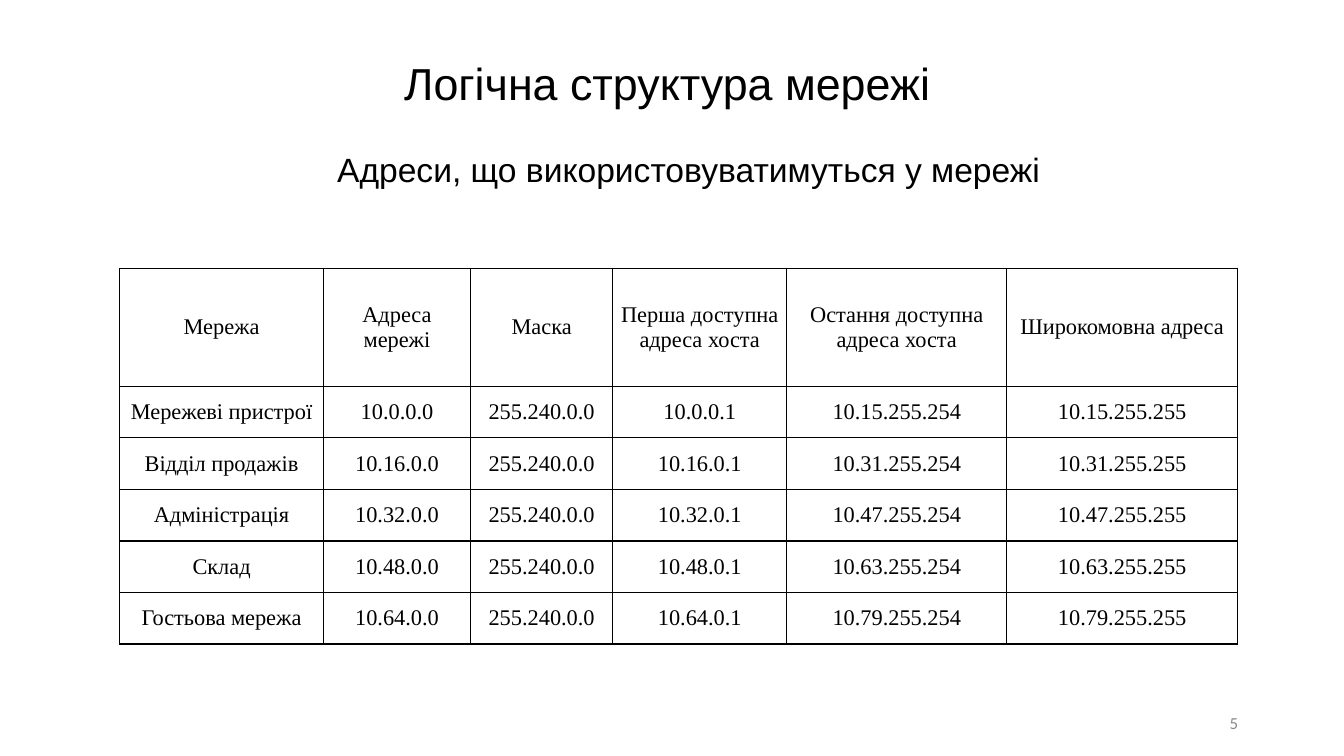
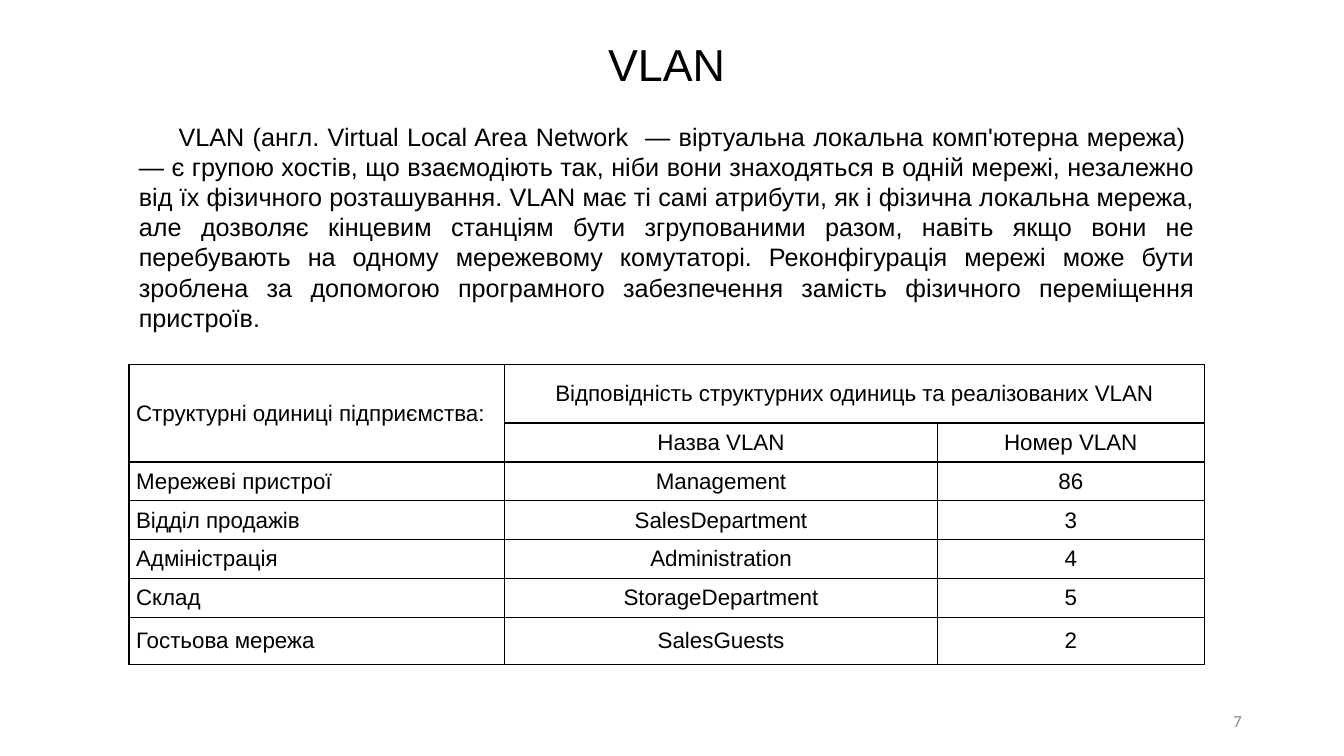
from dataclasses import dataclass
from typing import Optional

from lxml import etree
from pptx import Presentation
from pptx import slide as sl
from pptx import table as tb
from pptx import util as u
from pptx.dml import color
from pptx.enum import text
from pptx.oxml import ns
from pptx.text import text as tx

ALIGN = text.PP_ALIGN
ANCHOR = text.MSO_ANCHOR


@dataclass(frozen=True)
class TextStyle:
    font: str
    size: int
    color: str = "000000"


@dataclass(frozen=True)
class Theme:
    title: TextStyle = TextStyle("Arial", 32)
    subtitle: TextStyle = TextStyle("Arial", 24)
    body: TextStyle = TextStyle("Arial", 18)
    address_cell: TextStyle = TextStyle("Times New Roman", 16)
    vlan_cell: TextStyle = TextStyle("Arial", 16)
    page_number: TextStyle = TextStyle("Calibri", 12, "898989")
    border: str = "000000"
    border_width: int = 1


@dataclass(frozen=True)
class Box:
    left: float
    top: float
    width: float
    height: float

    def lengths(self) -> tuple[u.Length, ...]:
        return tuple(u.Cm(value) for value in (self.left, self.top, self.width, self.height))


@dataclass(frozen=True)
class Grid:
    left: float
    top: float
    columns: list[float]
    rows: list[float]
    side_margin: float
    style: TextStyle
    first_column: ALIGN = ALIGN.CENTER


THEME = Theme()
UNITS = ["Мережеві пристрої", "Відділ продажів", "Адміністрація", "Склад", "Гостьова мережа"]
VLANS = [
    ("Management", "86"),
    ("SalesDepartment", "3"),
    ("Administration", "4"),
    ("StorageDepartment", "5"),
    ("SalesGuests", "2"),
]
ADDRESS_HEADER = [
    "Мережа",
    "Адреса мережі",
    "Маска",
    "Перша доступна адреса хоста",
    "Остання доступна адреса хоста",
    "Широкомовна адреса",
]
VLAN_TEXT = (
    "VLAN (англ. Virtual Local Area Network  — віртуальна локальна комп'ютерна мережа)  "
    "— є групою хостів, що взаємодіють так, ніби вони знаходяться в одній мережі, незалежно "
    "від їх фізичного розташування. VLAN має ті самі атрибути, як і фізична локальна мережа, "
    "але дозволяє кінцевим станціям бути згрупованими разом, навіть якщо вони не перебувають "
    "на одному мережевому комутаторі. Реконфігурація мережі може бути зроблена за допомогою "
    "програмного забезпечення замість фізичного переміщення пристроїв."
)
ADDRESS_GRID = Grid(
    3.02, 6.76, [5.13, 3.71, 3.58, 4.39, 5.54, 5.82], [2.97] + [1.3] * 5, 0.08, THEME.address_cell
)
VLAN_GRID = Grid(
    3.25, 9.19, [9.47, 10.9, 6.73], [1.47] + [0.98] * 5 + [1.19], 0.18, THEME.vlan_cell, ALIGN.LEFT
)


def write(frame: tx.TextFrame, content: str, style: TextStyle, align: ALIGN) -> None:
    frame.text = content
    for paragraph in frame.paragraphs:
        paragraph.alignment = align
        for run in paragraph.runs:
            run.font.name = style.font
            run.font.size = u.Pt(style.size)
            run.font.color.rgb = color.RGBColor.from_string(style.color)


def add_titled_slide(presentation: Presentation, title: str, box: Box) -> sl.Slide:
    slide = presentation.slides.add_slide(presentation.slide_layouts[5])
    shape = slide.shapes.title
    shape.left, shape.top, shape.width, shape.height = box.lengths()
    shape.text_frame.vertical_anchor = ANCHOR.TOP
    write(shape.text_frame, title, THEME.title, ALIGN.CENTER)
    return slide


def add_text(
    slide: sl.Slide,
    box: Box,
    content: str,
    style: TextStyle,
    align: ALIGN,
    anchor: ANCHOR = ANCHOR.TOP,
    indent: float = 0,
) -> None:
    frame = slide.shapes.add_textbox(*box.lengths()).text_frame
    frame.word_wrap = True
    frame.vertical_anchor = anchor
    write(frame, content, style, align)
    if indent:
        properties = frame.paragraphs[0]._p.get_or_add_pPr()
        properties.set("marL", "0")
        properties.set("indent", str(u.Cm(indent)))


def add_page_number(slide: sl.Slide, number: int, left: float, top: float) -> None:
    box = Box(left, top, 7.62, 1.02)
    add_text(slide, box, str(number), THEME.page_number, ALIGN.RIGHT, ANCHOR.MIDDLE)


def outline_cell(cell: tb._Cell) -> None:
    properties = cell._tc.get_or_add_tcPr()
    for position, side in enumerate(("lnL", "lnR", "lnT", "lnB")):
        line = etree.Element(ns.qn(f"a:{side}"), w=str(u.Pt(THEME.border_width)))
        fill = etree.SubElement(line, ns.qn("a:solidFill"))
        etree.SubElement(fill, ns.qn("a:srgbClr"), val=THEME.border)
        properties.insert(position, line)


def add_grid(slide: sl.Slide, grid: Grid, content: list[list[Optional[str]]]) -> tb.Table:
    box = Box(grid.left, grid.top, sum(grid.columns), sum(grid.rows))
    table = slide.shapes.add_table(len(grid.rows), len(grid.columns), *box.lengths()).table
    table.first_row = table.horz_banding = False
    for column, width in zip(table.columns, grid.columns):
        column.width = u.Cm(width)
    for row, height, values in zip(table.rows, grid.rows, content):
        row.height = u.Cm(height)
        for index, (cell, value) in enumerate(zip(row.cells, values)):
            cell.margin_left = cell.margin_right = u.Cm(grid.side_margin)
            cell.margin_top = cell.margin_bottom = u.Cm(0)
            cell.vertical_anchor = ANCHOR.MIDDLE
            cell.fill.background()
            outline_cell(cell)
            if value is not None:
                align = ALIGN.CENTER if index else grid.first_column
                write(cell.text_frame, value, grid.style, align)
    return table


def address_row(index: int, unit: str) -> list[str]:
    first = 16 * index
    last = first + 15
    return [
        unit,
        f"10.{first}.0.0",
        "255.240.0.0",
        f"10.{first}.0.1",
        f"10.{last}.255.254",
        f"10.{last}.255.255",
    ]


def build_address_slide(presentation: Presentation) -> None:
    slide = add_titled_slide(presentation, "Логічна структура мережі", Box(3.27, 1.27, 27.1, 1.62))
    add_text(
        slide,
        Box(3.27, 3.63, 28.17, 1.28),
        "Адреси, що використовуватимуться у мережі",
        THEME.subtitle,
        ALIGN.CENTER,
    )
    rows = [address_row(index, unit) for index, unit in enumerate(UNITS)]
    add_grid(slide, ADDRESS_GRID, [ADDRESS_HEADER] + rows)
    add_page_number(slide, 5, 23.83, 17.7)


def build_vlan_slide(presentation: Presentation) -> None:
    slide = add_titled_slide(presentation, "VLAN", Box(3.25, 0.79, 27.1, 1.62))
    add_text(slide, Box(3.25, 2.92, 27.1, 5.64), VLAN_TEXT, THEME.body, ALIGN.JUSTIFY, indent=1)
    header = [
        [
            "Структурні одиниці підприємства:",
            "Відповідність структурних одиниць та реалізованих VLAN",
            None,
        ],
        [None, "Назва VLAN", "Номер VLAN"],
    ]
    rows = [[unit, name, number] for unit, (name, number) in zip(UNITS, VLANS)]
    table = add_grid(slide, VLAN_GRID, header + rows)
    table.cell(0, 0).merge(table.cell(1, 0))
    table.cell(0, 1).merge(table.cell(0, 2))
    add_page_number(slide, 7, 23.93, 17.65)


def main() -> None:
    presentation = Presentation()
    presentation.slide_width = u.Cm(33.87)
    presentation.slide_height = u.Cm(19.05)
    build_address_slide(presentation)
    build_vlan_slide(presentation)
    presentation.save("out.pptx")


if __name__ == "__main__":
    main()
